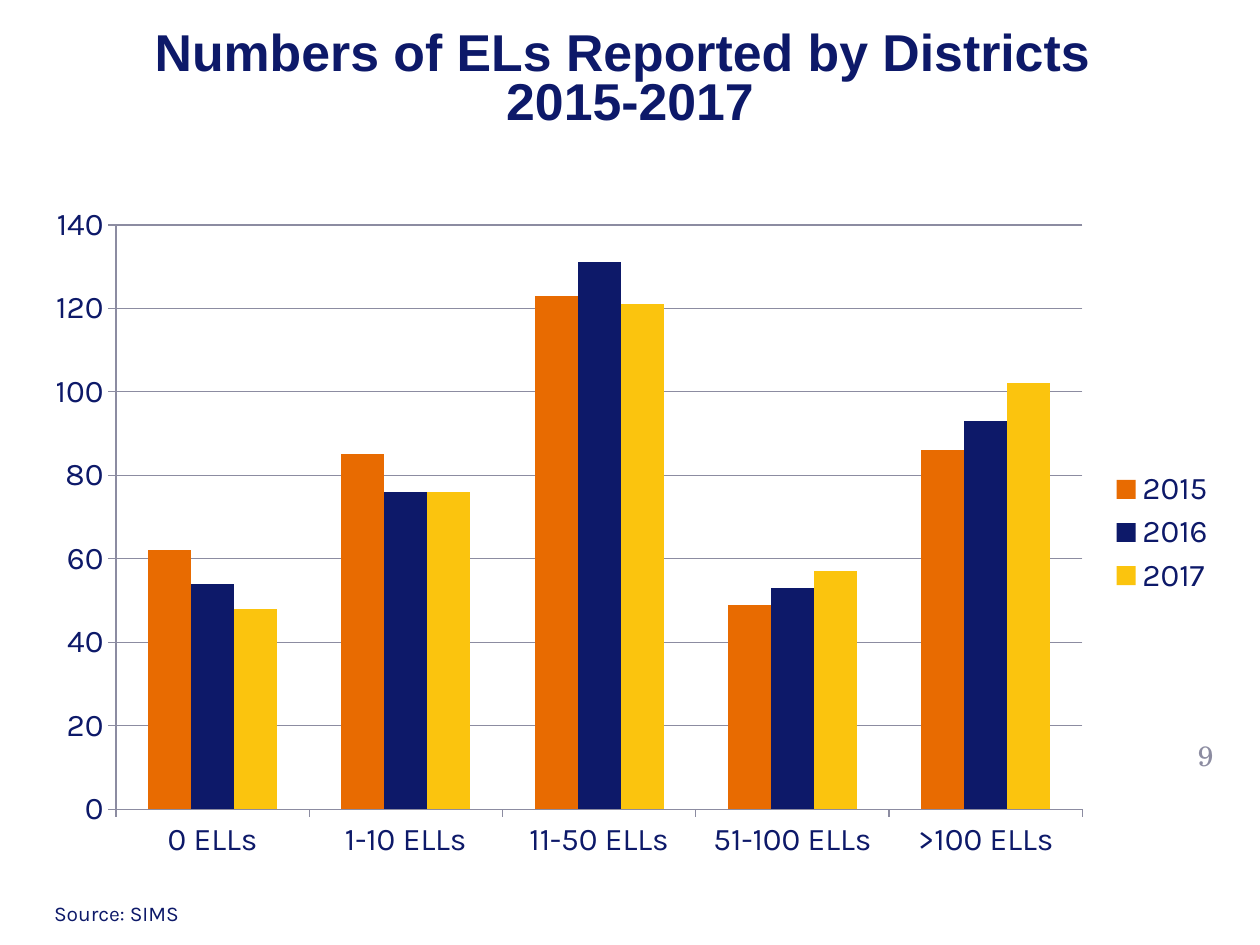
from dataclasses import dataclass

from pptx import Presentation
from pptx.chart.data import CategoryChartData
from pptx.dml.color import RGBColor
from pptx.enum import chart as charts, shapes, text
from pptx.util import Cm, Pt


@dataclass(frozen=True)
class Theme:
    navy: RGBColor = RGBColor.from_string("0D1969")
    orange: RGBColor = RGBColor.from_string("E86B01")
    yellow: RGBColor = RGBColor.from_string("FBC40E")
    grey: RGBColor = RGBColor.from_string("8C8CA1")
    white: RGBColor = RGBColor.from_string("FFFFFF")
    heading_font: str = "Arial"
    body_font: str = "Karla"
    number_font: str = "TeX Gyre Schola"
    title_size: Pt = Pt(29.6)
    chart_size: Pt = Pt(18)
    number_size: Pt = Pt(16)
    source_size: Pt = Pt(12)


theme = Theme()


def style_font(font, name, size, color, bold=False):
    font.name = name
    font.size = size
    font.color.rgb = color
    font.bold = bold


presentation = Presentation()
presentation.slide_width = Cm(25.4)
presentation.slide_height = Cm(19.05)
slide = presentation.slides.add_slide(presentation.slide_layouts[6])

# Page number
page_number = slide.shapes.add_textbox(Cm(23.57), Cm(14.6), Cm(1.47), Cm(1.27))
frame = page_number.text_frame
frame.text = "9"
frame.word_wrap = True
frame.vertical_anchor = text.MSO_ANCHOR.MIDDLE
paragraph = frame.paragraphs[0]
paragraph.alignment = text.PP_ALIGN.CENTER
style_font(paragraph.runs[0].font, theme.number_font, theme.number_size, theme.grey)

# District counts by year
chart_data = CategoryChartData()
chart_data.categories = ["0 ELLs", "1-10 ELLs", "11-50 ELLs", "51-100 ELLs", ">100 ELLs"]
years = [
    ("2015", (62, 85, 123, 49, 86), theme.orange),
    ("2016", (54, 76, 131, 53, 93), theme.navy),
    ("2017", (48, 76, 121, 57, 102), theme.yellow),
]
for year, counts, _ in years:
    chart_data.add_series(year, counts)

chart = slide.shapes.add_chart(
    charts.XL_CHART_TYPE.COLUMN_CLUSTERED,
    Cm(0.64), Cm(3.89), Cm(24.13), Cm(13.69), chart_data,
).chart
style_font(chart.font, theme.body_font, theme.chart_size, theme.navy)
chart.has_title = False
chart.has_legend = True
chart.legend.position = charts.XL_LEGEND_POSITION.RIGHT
chart.legend.include_in_layout = False

plot = chart.plots[0]
plot.gap_width = 150
plot.overlap = 0
plot.vary_by_categories = False
for series, (_, _, color) in zip(plot.series, years):
    series.format.fill.solid()
    series.format.fill.fore_color.rgb = color

value_axis = chart.value_axis
value_axis.minimum_scale = 0
value_axis.maximum_scale = 140
value_axis.major_unit = 20
value_axis.has_major_gridlines = True
for axis in (chart.category_axis, value_axis):
    axis.major_tick_mark = charts.XL_TICK_MARK.OUTSIDE
    axis.minor_tick_mark = charts.XL_TICK_MARK.NONE
for line in (
    chart.category_axis.format.line,
    value_axis.format.line,
    value_axis.major_gridlines.format.line,
):
    line.color.rgb = theme.grey
    line.width = Pt(0.75)

# Title
title = slide.shapes.add_shape(
    shapes.MSO_SHAPE.RECTANGLE, Cm(0.64), Cm(0.43), Cm(24.13), Cm(2.41)
)
title.shadow.inherit = False
title.fill.solid()
title.fill.fore_color.rgb = theme.white
title.line.fill.background()
frame = title.text_frame
frame.text = "Numbers of ELs Reported by Districts \n2015-2017"
frame.word_wrap = True
frame.vertical_anchor = text.MSO_ANCHOR.MIDDLE
for paragraph in frame.paragraphs:
    paragraph.alignment = text.PP_ALIGN.CENTER
    paragraph.line_spacing = 0.8
    style_font(paragraph.runs[0].font, theme.heading_font, theme.title_size, theme.navy, bold=True)

# Source line
source = slide.shapes.add_textbox(Cm(0.84), Cm(18.03), Cm(12.5), Cm(0.76))
frame = source.text_frame
frame.text = "Source: SIMS"
frame.word_wrap = True
frame.auto_size = text.MSO_AUTO_SIZE.SHAPE_TO_FIT_TEXT
style_font(frame.paragraphs[0].runs[0].font, theme.body_font, theme.source_size, theme.navy)

presentation.save("out.pptx")
